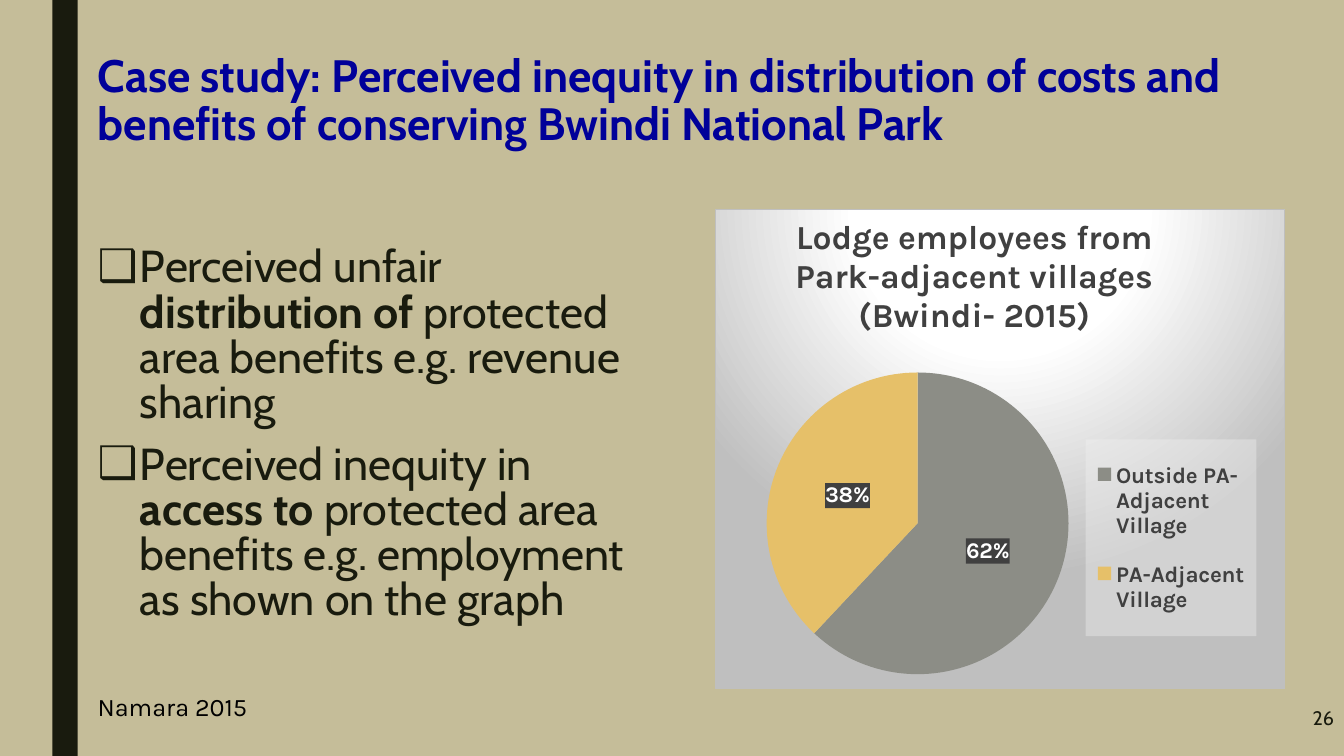
import lxml.etree
import pptx
import pptx.chart.data
import pptx.dml.color
import pptx.enum.chart
import pptx.enum.shapes
import pptx.enum.text
import pptx.oxml
import pptx.oxml.ns
import pptx.util

INK = {"blue": "000099", "dark": "191B0E", "sand": "C5BD99", "black": "000000",
       "gray": "404040", "white": "FFFFFF", "stone": "8C8D86", "gold": "E6C069",
       "mist": "BFBFBF", "pale": "F2F2F2"}
ALIGN = pptx.enum.text.PP_ALIGN
ANCHOR = pptx.enum.text.MSO_ANCHOR
CHART = pptx.enum.chart
NS = pptx.oxml.ns.nsdecls("a", "c")
qn = pptx.oxml.ns.qn


def px(n):
    return pptx.util.Emu(n * 9144)


def rgb(name):
    return pptx.dml.color.RGBColor.from_string(INK[name])


def put(item, look):
    for key, value in look.items():
        setattr(item, key, value)


def font(item, size, color, face, bold=False):
    put(item, {"size": pptx.util.Pt(size), "name": face, "bold": bold})
    item.color.rgb = rgb(color)


def solid(name, alpha=100):
    return (f'<a:solidFill><a:srgbClr val="{INK[name]}">'
            f'<a:alpha val="{alpha * 1000}"/></a:srgbClr></a:solidFill>')


def paint(fill, line="<a:ln><a:noFill/></a:ln>"):
    return pptx.oxml.parse_xml(f"<c:spPr {NS}>{fill}{line}</c:spPr>")


def place(x, y, w=None, h=None, inner=False):
    parts = '<c:layoutTarget val="inner"/>' if inner else ""
    parts += '<c:xMode val="edge"/><c:yMode val="edge"/>'
    for tag, value in zip("xywh", (x, y, w, h)):
        if value is not None:
            parts += f'<c:{tag} val="{value}"/>'
    return pptx.oxml.parse_xml(
        f"<c:layout {NS}><c:manualLayout>{parts}</c:manualLayout></c:layout>")


def lay(node, layout, before):
    for old in node.findall(qn("c:layout")):
        node.remove(old)
    node.find(qn(before)).addprevious(layout)


class Deck:
    def __init__(self):
        self.show = pptx.Presentation()
        put(self.show, {"slide_width": px(1333), "slide_height": px(750)})
        self.slide = self.show.slides.add_slide(self.show.slide_layouts[5])
        fill = self.slide.background.fill
        fill.solid()
        fill.fore_color.rgb = rgb("sand")

    def bar(self, x, y, w, h, color):
        kind = pptx.enum.shapes.MSO_SHAPE.RECTANGLE
        bar = self.slide.shapes.add_shape(kind, px(x), px(y), px(w), px(h))
        bar.shadow.inherit = False
        bar.fill.solid()
        bar.fill.fore_color.rgb = rgb(color)
        bar.line.fill.background()

    def frame(self, box, anchor):
        frame = box.text_frame
        put(frame, {"word_wrap": True, "vertical_anchor": anchor,
                    "auto_size": pptx.enum.text.MSO_AUTO_SIZE.NONE})
        return frame

    def title(self, x, y, w, h, text):
        box = self.slide.shapes.title
        put(box, {"left": px(x), "top": px(y), "width": px(w), "height": px(h)})
        para = self.frame(box, ANCHOR.TOP).paragraphs[0]
        put(para, {"alignment": ALIGN.LEFT, "line_spacing": 0.89})
        run = para.add_run()
        run.text = text
        font(run.font, 32.4, "blue", "Cabin", True)

    def box(self, x, y, w, h, anchor=ANCHOR.TOP):
        box = self.slide.shapes.add_textbox(px(x), px(y), px(w), px(h))
        return self.frame(box, anchor)

    def note(self, x, y, w, h, text, size, color, face,
             align=ALIGN.LEFT, anchor=ANCHOR.TOP):
        para = self.box(x, y, w, h, anchor).paragraphs[0]
        para.alignment = align
        run = para.add_run()
        run.text = text
        font(run.font, size, color, face)

    def points(self, x, y, w, h, items):
        frame = self.box(x, y, w, h)
        for i, item in enumerate(items):
            para = frame.add_paragraph() if i else frame.paragraphs[0]
            put(para, {"line_spacing": 0.84, "space_before": pptx.util.Pt(10),
                       "space_after": pptx.util.Pt(2)})
            props = para._p.get_or_add_pPr()
            props.set("marL", str(px(42)))
            props.set("indent", str(-px(42)))
            for tag, key, value in (("a:buFont", "typeface", "Cabin"),
                                    ("a:buChar", "char", "❑")):
                lxml.etree.SubElement(props, qn(tag)).set(key, value)
            for j, text in enumerate(item):
                run = para.add_run()
                run.text = text
                font(run.font, 32, "dark", "Cabin", j == 1)

    def pie(self, x, y, w, h, title, parts):
        data = pptx.chart.data.CategoryChartData()
        data.categories = [name for name, _, _ in parts]
        data.add_series("Series 1", [value for _, value, _ in parts])
        chart = self.slide.shapes.add_chart(
            CHART.XL_CHART_TYPE.PIE, px(x), px(y), px(w), px(h), data).chart
        font(chart.font, 10, "black", "Karla")
        stops = "".join(
            f'<a:gs pos="{pos * 1000}"><a:srgbClr val="{INK[name]}"/></a:gs>'
            for pos, name in ((0, "white"), (39, "white"), (100, "mist")))
        grad = (f'<a:gradFill><a:gsLst>{stops}</a:gsLst><a:path path="circle">'
                '<a:fillToRect l="50000" t="-80000" r="50000" b="180000"/>'
                '</a:path></a:gradFill>')
        edge = f'<a:ln w="9525">{solid("mist")}</a:ln>'
        chart._chartSpace.find(qn("c:txPr")).addprevious(paint(grad, edge))

        chart.has_title = True
        run = chart.chart_title.text_frame.paragraphs[0].add_run()
        run.text = title
        font(run.font, 24, "gray", "Karla", True)
        chart.chart_title.include_in_layout = False
        lay(chart.chart_title._element, place(0.13, 0), "c:overlay")

        plot = chart.plots[0]
        plot.vary_by_categories = True
        for i, (_, _, color) in enumerate(parts):
            fill = plot.series[0].points[i].format.fill
            fill.solid()
            fill.fore_color.rgb = rgb(color)
        lay(plot._element.getparent(), place(0.09, 0.34, 0.53, 0.63, True),
            "c:pieChart")

        plot.has_data_labels = True
        tags = plot.data_labels
        font(tags.font, 16, "white", "Karla", True)
        put(tags, {"show_percentage": True, "show_value": False,
                   "number_format": "0%", "number_format_is_linked": False,
                   "position": CHART.XL_LABEL_POSITION.CENTER})
        tags._element.find(qn("c:txPr")).addprevious(paint(solid("gray")))

        chart.has_legend = True
        key = chart.legend
        put(key, {"position": CHART.XL_LEGEND_POSITION.RIGHT,
                  "include_in_layout": False})
        font(key.font, 16, "gray", "Karla", True)
        lay(key._element, place(0.65, 0.48, 0.3, 0.41), "c:overlay")
        key._element.find(qn("c:txPr")).addprevious(paint(solid("pale", 39)))


def main():
    deck = Deck()
    deck.bar(52, 0, 25, 750, "dark")
    deck.title(87, 48, 1230, 131,
               "Case study: Perceived inequity in distribution of costs and "
               "benefits of conserving Bwindi National Park")
    deck.pie(709, 207, 566, 477,
             "Lodge employees from Park-adjacent villages (Bwindi- 2015)",
             [("Outside PA-Adjacent Village", 62, "stone"),
              ("PA-Adjacent Village", 38, "gold")])
    deck.points(87, 240, 567, 397, [
        ("Perceived unfair ", "distribution of ",
         "protected area benefits e.g. revenue sharing"),
        ("Perceived inequity in ", "access to",
         " protected area benefits e.g. employment as shown on the graph")])
    deck.note(87, 681, 1091, 40, "Namara 2015", 18, "black", "Karla")
    deck.note(1254, 674, 79, 75, "26", 14, "dark", "Cabin",
              ALIGN.RIGHT, ANCHOR.MIDDLE)
    deck.show.save("out.pptx")


if __name__ == "__main__":
    main()
